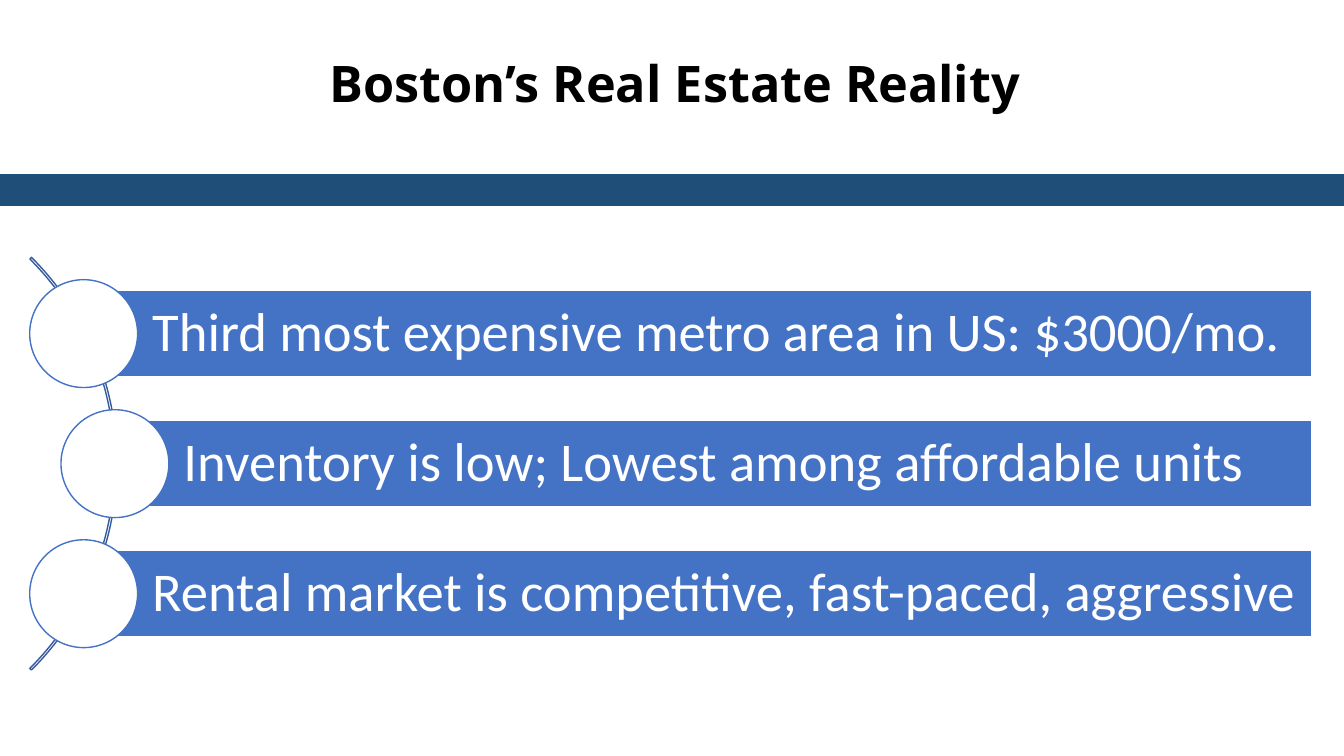
import pptx
import pptx.dml.color
import pptx.enum.shapes
import pptx.enum.text
import pptx.util

Inches = pptx.util.Inches
SHAPES = pptx.enum.shapes.MSO_SHAPE
ALIGN = pptx.enum.text.PP_ALIGN
ANCHOR = pptx.enum.text.MSO_ANCHOR

SLIDE_WIDTH, SLIDE_HEIGHT = 13.33, 7.5
NAVY, BLUE, ARC_BLUE = "1F4E79", "4472C4", "365B9D"
WHITE, BLACK = "FFFFFF", "000000"

LIST_CENTER = 4.6
ROW_PITCH = 1.29
BAR_HEIGHT = 0.86
BAR_RIGHT = 13.01
CIRCLE_SIZE = 1.07
ARC_SIZE = 5.79
ARC_LEFT = -4.63

# Each point with the horizontal centre of its circle
POINTS = [
    ("Third most expensive metro area in US: $3000/mo.", 0.83),
    ("Inventory is low; Lowest among affordable units", 1.14),
    ("Rental market is competitive, fast-paced, aggressive", 0.83),
]


def color(hex_string):
    return pptx.dml.color.RGBColor.from_string(hex_string)


def add_shape(slide, kind, left, top, width, height, line, fill=None):
    shape = slide.shapes.add_shape(
        kind, Inches(left), Inches(top), Inches(width), Inches(height))
    shape.shadow.inherit = False
    if fill:
        shape.fill.solid()
        shape.fill.fore_color.rgb = color(fill)
    else:
        shape.fill.background()
    shape.line.color.rgb = color(line)
    shape.line.width = pptx.util.Pt(1)
    return shape


def write_text(shape, text, *, size, font, ink, bold=False, align=ALIGN.LEFT,
               anchor=ANCHOR.TOP, insets=(0.1, 0.05, 0.1, 0.05), spacing=1.0):
    """Fill a shape with one paragraph; insets are left, top, right, bottom."""
    frame = shape.text_frame
    frame.word_wrap = True
    frame.vertical_anchor = anchor
    (frame.margin_left, frame.margin_top,
     frame.margin_right, frame.margin_bottom) = map(Inches, insets)
    paragraph = frame.paragraphs[0]
    paragraph.alignment = align
    paragraph.line_spacing = spacing
    run = paragraph.add_run()
    run.text = text
    run.font.size = pptx.util.Pt(size)
    run.font.name = font
    run.font.bold = bold
    run.font.color.rgb = color(ink)


def add_title(slide, text):
    width = 12.23
    box = slide.shapes.add_textbox(
        Inches(0.58), Inches(0.47), Inches(width), Inches(0.71))
    write_text(box, text, size=36, font="Open Sans", ink=BLACK, bold=True,
               align=ALIGN.CENTER)


def add_arc(slide):
    arc = add_shape(slide, SHAPES.BLOCK_ARC, ARC_LEFT,
                    LIST_CENTER - ARC_SIZE / 2, ARC_SIZE, ARC_SIZE, ARC_BLUE)
    for index, value in enumerate((189, 27, 0.004)):
        arc.adjustments[index] = value


def add_point(slide, text, center_x, center_y):
    """Draw a labelled bar with a circle centred on its left edge."""
    bar = add_shape(slide, SHAPES.RECTANGLE, center_x,
                    center_y - BAR_HEIGHT / 2, BAR_RIGHT - center_x,
                    BAR_HEIGHT, WHITE, BLUE)
    write_text(bar, text, size=39, font="Calibri", ink=WHITE,
               anchor=ANCHOR.MIDDLE, insets=(0.68, 0.11, 0.05, 0.11),
               spacing=0.9)
    radius = CIRCLE_SIZE / 2
    add_shape(slide, SHAPES.OVAL, center_x - radius, center_y - radius,
              CIRCLE_SIZE, CIRCLE_SIZE, BLUE, WHITE)


def main():
    presentation = pptx.Presentation()
    presentation.slide_width = Inches(SLIDE_WIDTH)
    presentation.slide_height = Inches(SLIDE_HEIGHT)
    slide = presentation.slides.add_slide(presentation.slide_layouts[6])

    add_title(slide, "Boston’s Real Estate Reality")
    add_shape(slide, SHAPES.RECTANGLE, 0, 1.73, SLIDE_WIDTH, 0.31, NAVY, NAVY)
    add_arc(slide)
    for row, (text, center_x) in enumerate(POINTS):
        add_point(slide, text, center_x, LIST_CENTER + (row - 1) * ROW_PITCH)

    presentation.save("out.pptx")


if __name__ == "__main__":
    main()
